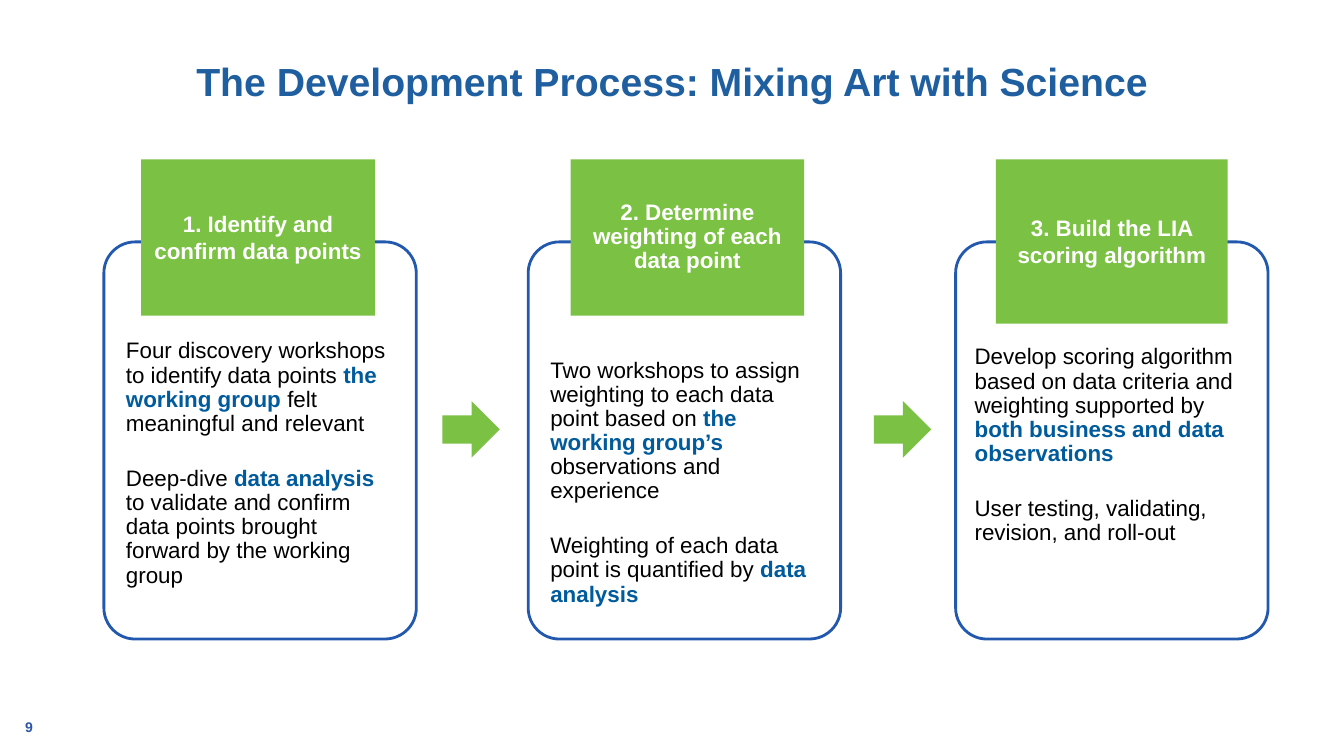
import dataclasses

import pptx
import pptx.dml.color
import pptx.enum.shapes
import pptx.enum.text
import pptx.oxml.ns
import pptx.util
from lxml import etree

Pt = pptx.util.Pt
ALIGN = pptx.enum.text.PP_ALIGN
ANCHOR = pptx.enum.text.MSO_ANCHOR
SHAPE = pptx.enum.shapes.MSO_SHAPE


@dataclasses.dataclass(frozen=True)
class Theme:
    """Colours, font and type sizes of the deck."""
    font: str = "Arial"
    title: str = "1F5FA0"
    number: str = "2C55A6"
    green: str = "7BC143"
    border: str = "2258AD"
    accent: str = "005B9C"
    black: str = "000000"
    white: str = "FFFFFF"
    title_size: float = 28
    body_size: float = 16
    number_size: float = 10


THEME = Theme()

STEPS = [
    dict(left=74.2, header="1. Identify and confirm data points",
         header_dx=26.6, header_w=167, header_h=111.6, header_spacing=None,
         body_dx=5.8, body_dy=59.8,
         body=[[("Four discovery workshops to identify data points ", False),
                ("the working group ", True),
                ("felt meaningful and relevant", False)],
               [("Deep-dive ", False), ("data analysis ", True),
                ("to validate and confirm data points brought forward "
                 "by the working group", False)]]),
    dict(left=377.3, header="2. Determine weighting of each data point",
         header_dx=30.2, header_w=167, header_h=111.6, header_spacing=0.9,
         body_dx=5.8, body_dy=73.4,
         body=[[("Two workshops to assign weighting to each data point based on ", False),
                ("the working group’s ", True),
                ("observations and experience", False)],
               [("Weighting of each data point is quantified by ", False),
                ("data analysis", True)]]),
    dict(left=682.6, header="3. Build the LIA scoring algorithm",
         header_dx=28.8, header_w=165.6, header_h=117.4, header_spacing=None,
         body_dx=3.6, body_dy=64.1,
         body=[[("Develop scoring algorithm based on data criteria and "
                 "weighting supported by ", False),
                ("both business and data observations", True)],
               [("User testing, validating, revision, and roll-out", False)]]),
]


def rgb(value):
    """Turn a hex string into a colour."""
    return pptx.dml.color.RGBColor.from_string(value)


def add_run(p, text, *, size, color, bold=False):
    """Append one formatted run to a paragraph."""
    r = p.add_run()
    r.text = text
    r.font.name = THEME.font
    r.font.size = Pt(size)
    r.font.bold = bold
    r.font.color.rgb = rgb(color)


def set_frame(tf, inset, anchor):
    """Set wrapping, equal insets and anchoring of a text frame."""
    tf.word_wrap = True
    tf.margin_left = tf.margin_right = Pt(inset)
    tf.margin_top = tf.margin_bottom = Pt(inset)
    tf.vertical_anchor = anchor


def add_textbox(s, box, inset, anchor):
    """Add a wrapping text box and return its frame."""
    tf = s.shapes.add_textbox(*map(Pt, box)).text_frame
    set_frame(tf, inset, anchor)
    return tf


def add_block(s, kind, box, fill):
    """Add a flat filled shape without an outline."""
    sp = s.shapes.add_shape(kind, *map(Pt, box))
    sp.shadow.inherit = False
    sp.fill.solid()
    sp.fill.fore_color.rgb = rgb(fill)
    sp.line.fill.background()
    return sp


def add_title(s, box, text):
    """Place the centred slide title."""
    p = add_textbox(s, box, 3.6, ANCHOR.MIDDLE).paragraphs[0]
    p.alignment = ALIGN.CENTER
    add_run(p, text, size=THEME.title_size, color=THEME.title, bold=True)


def add_number(s, box, text):
    """Place the slide number."""
    p = add_textbox(s, box, 0, ANCHOR.BOTTOM).paragraphs[0]
    add_run(p, text, size=THEME.number_size, color=THEME.number, bold=True)


def add_card(s, box):
    """Place the rounded, slightly transparent outline of a step."""
    sp = add_block(s, SHAPE.ROUNDED_RECTANGLE, box, THEME.white)
    sp.adjustments[0] = 0.1
    sp.line.color.rgb = rgb(THEME.border)
    sp.line.width = Pt(2)
    qn = pptx.oxml.ns.qn
    color = sp.fill._xPr.find(qn("a:solidFill")).find(qn("a:srgbClr"))
    etree.SubElement(color, qn("a:alpha")).set("val", "90000")


def add_body(s, box, paragraphs):
    """Place the step description with its highlighted phrases."""
    tf = add_textbox(s, box, 10, ANCHOR.TOP)
    for i, runs in enumerate(paragraphs):
        p = tf.add_paragraph() if i else tf.paragraphs[0]
        p.line_spacing = 0.9
        if i:
            p.space_before = Pt(22)
        for text, strong in runs:
            add_run(p, text, size=THEME.body_size, bold=strong,
                    color=THEME.accent if strong else THEME.black)


def add_header(s, box, text, spacing):
    """Place the green heading block of a step."""
    tf = add_block(s, SHAPE.RECTANGLE, box, THEME.green).text_frame
    set_frame(tf, 1.4, ANCHOR.MIDDLE)
    p = tf.paragraphs[0]
    p.alignment = ALIGN.CENTER
    p.line_spacing = spacing
    add_run(p, text, size=THEME.body_size, color=THEME.white, bold=True)


def add_step(s, box, step):
    """Place one process step relative to its card box."""
    x, y, w, h = box
    add_card(s, box)
    add_body(s, (x + step["body_dx"], y + step["body_dy"], 211.7, h - step["body_dy"]),
             step["body"])
    add_header(s, (x + step["header_dx"], y - 59, step["header_w"], step["header_h"]),
               step["header"], step["header_spacing"])


def process_slide(prs):
    """Build the three-step process slide."""
    s = prs.slides.add_slide(prs.slide_layouts[6])
    add_number(s, (18, 499.7, 28.8, 25.2), "9")
    add_title(s, (0, 21.6, 960, 72),
              "The Development Process: Mixing Art with Science")
    for step in STEPS:
        add_step(s, (step["left"], 172.8, 223.2, 283.7), step)
    for left in (316, 624.2):
        add_block(s, SHAPE.RIGHT_ARROW, (left, 286.6, 41, 40.3), THEME.green)


def main():
    """Create and save the presentation."""
    prs = pptx.Presentation()
    prs.slide_width, prs.slide_height = Pt(960), Pt(540)
    process_slide(prs)
    prs.save("out.pptx")


if __name__ == "__main__":
    main()
